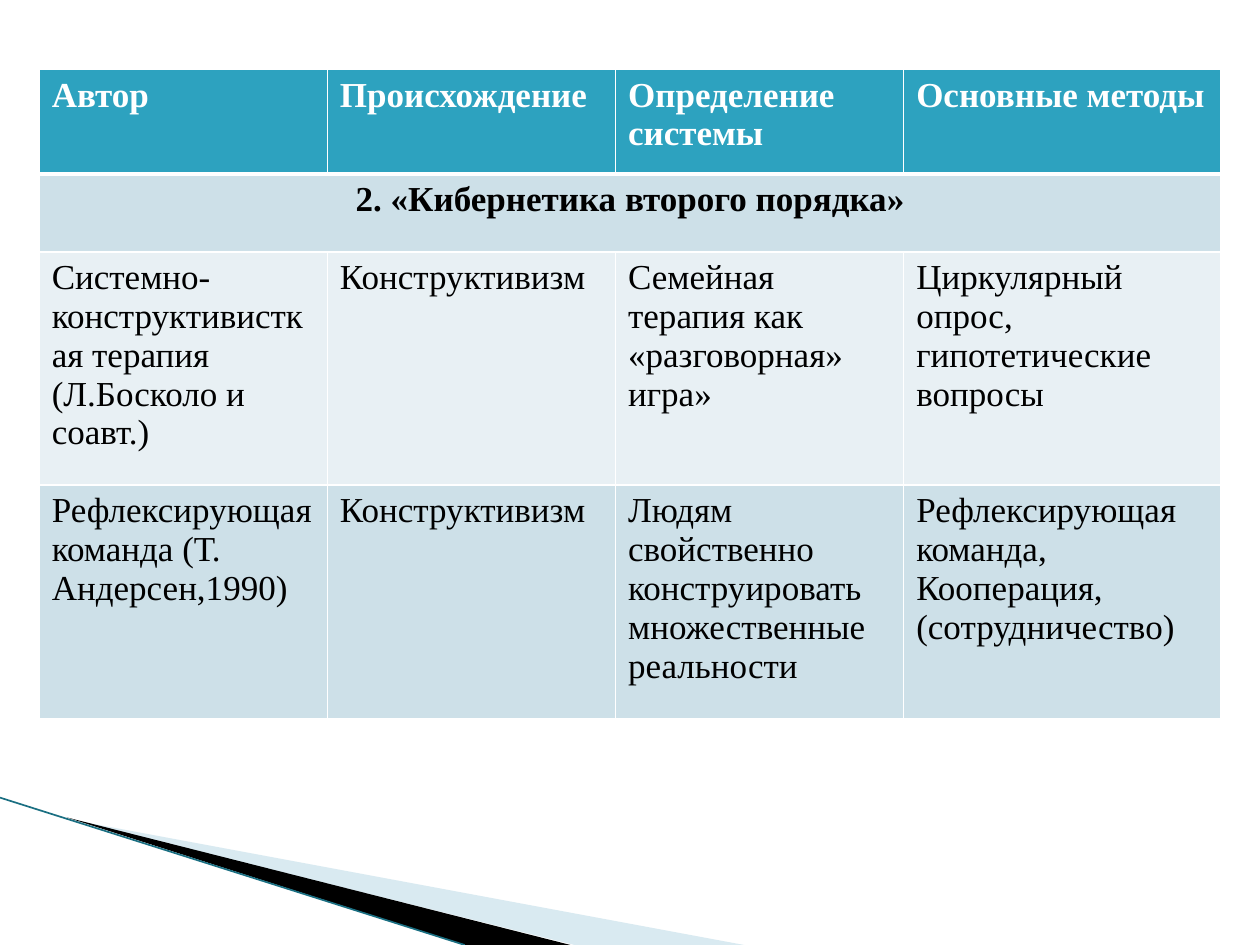
"""Build a slide with a table of second-order cybernetics family therapy approaches."""
from lxml import etree
from pptx import Presentation
from pptx import util as u
from pptx.dml import color
from pptx.enum import shapes, text
from pptx.oxml import ns

COLORS = {
    "header": "2DA2BF", "band": "CDE0E8", "light_band": "E8F0F4",
    "white": "FFFFFF", "black": "000000", "wedge": "A0CBDC", "edge": "1A6F82",
}
ROWS = [
    ["Автор", "Происхождение", "Определение системы", "Основные методы"],
    ["2. «Кибернетика второго порядка»"],
    ["Системно-конструктивисткая терапия (Л.Босколо и соавт.)", "Конструктивизм",
     "Семейная терапия как «разговорная» игра»",
     "Циркулярный опрос, гипотетические вопросы"],
    ["Рефлексирующая команда (Т. Андерсен,1990)", "Конструктивизм",
     "Людям свойственно конструировать множественные реальности",
     "Рефлексирующая команда,\nКооперация,\n(сотрудничество)"],
]
ROW_FILLS = ["header", "band", "light_band", "band"]
COLUMN_WIDTHS = [5.81, 5.81, 5.81, 6.4]
ROW_HEIGHTS = [2.11, 1.57, 4.7, 4.7]


def rgb(name):
    return color.RGBColor.from_string(COLORS[name])


def add_border(cell, side, points):
    border = etree.SubElement(cell._tc.get_or_add_tcPr(), ns.qn(f"a:ln{side}"),
                              w=str(u.Pt(points)))
    solid = etree.SubElement(border, ns.qn("a:solidFill"))
    etree.SubElement(solid, ns.qn("a:srgbClr"), val=COLORS["white"])


prs = Presentation()
prs.slide_width, prs.slide_height = u.Cm(25.4), u.Cm(19.05)
slide = prs.slides.add_slide(prs.slide_layouts[6])

WEDGES = [
    ("wedge", 40, [(1.4, 16.52), (15, 19.05), (11.58, 19.05)]),
    ("black", 100, [(1.35, 16.48), (11.5, 19.05), (9.37, 19.05)]),
]
for fill_name, opacity, points in WEDGES:
    corners = [(u.Cm(x), u.Cm(y)) for x, y in points]
    builder = slide.shapes.build_freeform(*corners[0])
    builder.add_line_segments(corners[1:], close=True)
    wedge = builder.convert_to_shape()
    wedge.shadow.inherit = False
    wedge.line.fill.background()
    wedge.fill.solid()
    wedge.fill.fore_color.rgb = rgb(fill_name)
    if opacity < 100:
        tint = wedge._element.spPr.find(".//" + ns.qn("a:srgbClr"))
        etree.SubElement(tint, ns.qn("a:alpha"), val=str(opacity * 1000))

edge = slide.shapes.add_connector(shapes.MSO_CONNECTOR.STRAIGHT,
                                  u.Cm(0), u.Cm(16.08), u.Cm(9.37), u.Cm(19.05))
edge.line.color.rgb = rgb("edge")
edge.line.width = u.Pt(0.95)
etree.SubElement(edge._element.spPr, ns.qn("a:effectLst"))

approaches = slide.shapes.add_table(
    len(ROWS), len(COLUMN_WIDTHS), u.Cm(0.79), u.Cm(1.4),
    u.Cm(sum(COLUMN_WIDTHS)), u.Cm(sum(ROW_HEIGHTS))).table
for column, width in zip(approaches.columns, COLUMN_WIDTHS):
    column.width = u.Cm(width)
for row, height in zip(approaches.rows, ROW_HEIGHTS):
    row.height = u.Cm(height)
approaches.cell(1, 0).merge(approaches.cell(1, 3))

for r, entries in enumerate(ROWS):
    for c in range(len(COLUMN_WIDTHS)):
        cell = approaches.cell(r, c)
        for side in "LRTB":
            under_header = (r, side) in [(0, "B"), (1, "T")]
            add_border(cell, side, 3 if under_header else 1)
        cell.fill.solid()
        cell.fill.fore_color.rgb = rgb(ROW_FILLS[r])
        if c >= len(entries):
            continue
        cell.text_frame.text = entries[c]
        for paragraph in cell.text_frame.paragraphs:
            if r == 1:
                paragraph.alignment = text.PP_ALIGN.CENTER
            for run in paragraph.runs:
                run.font.name = "Times New Roman"
                run.font.size = u.Pt(20)
                run.font.bold = r < 2
                run.font.color.rgb = rgb("white" if r == 0 else "black")

prs.save("out.pptx")
